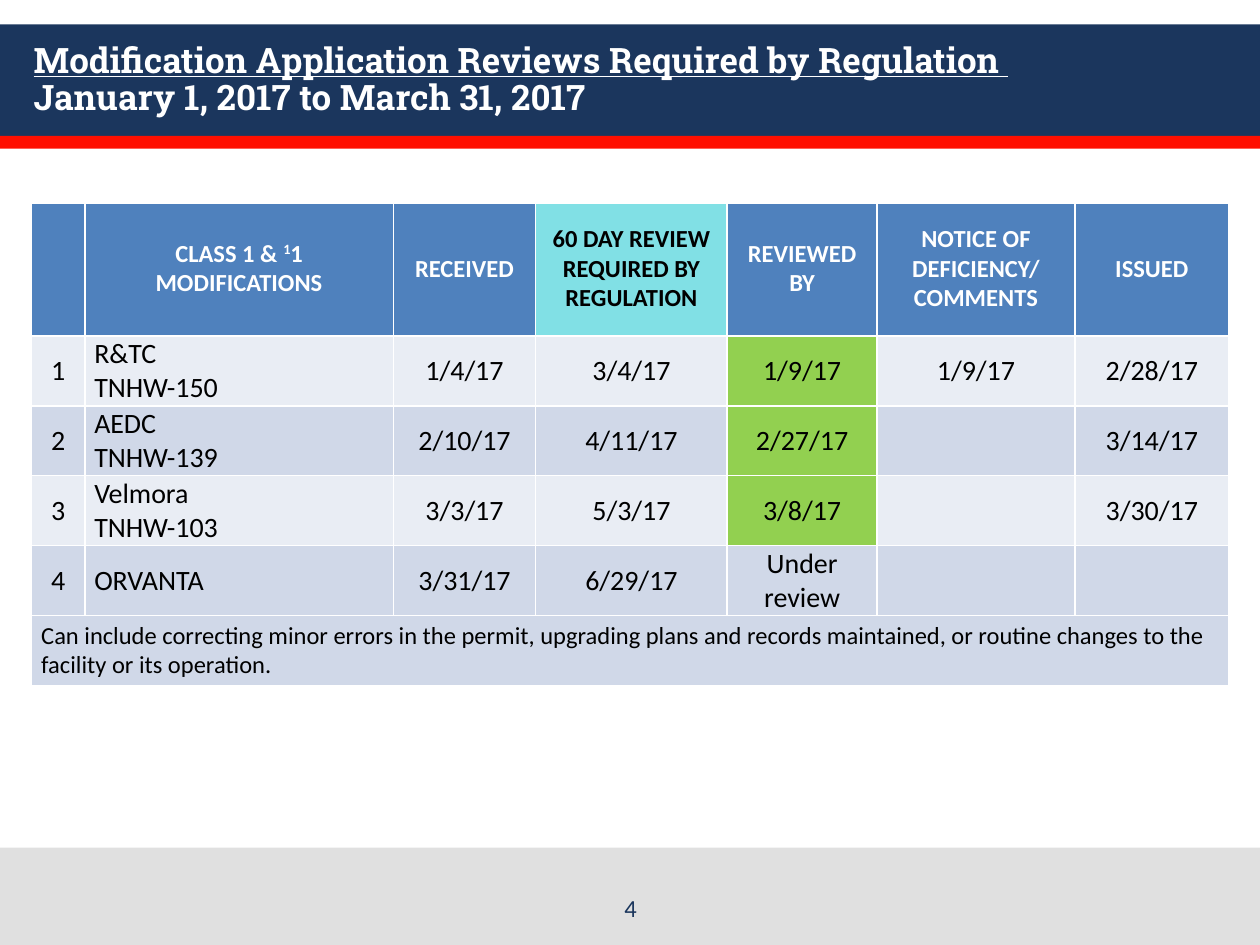
import lxml.etree
import pptx
import pptx.dml.color
import pptx.enum.shapes
import pptx.enum.text
import pptx.oxml.ns
import pptx.util

Cm = pptx.util.Cm
Pt = pptx.util.Pt
ALIGN = pptx.enum.text.PP_ALIGN
ANCHOR = pptx.enum.text.MSO_ANCHOR

COLORS = {
    "white": "FFFFFF", "black": "000000", "navy": "1B365D", "red": "FF0F00",
    "footer": "E0E0E0", "header": "4F81BD", "deadline": "81E0E5",
    "odd": "E9EDF4", "even": "D0D8E8", "reviewed": "92D050",
}
HEADINGS = [
    [], [[("CLASS 1 & ", {}), ("1", {"baseline": 30000}), ("1 MODIFICATIONS", {})]],
    ["RECEIVED"], ["60 DAY REVIEW", "REQUIRED BY", "REGULATION"],
    ["REVIEWED BY"], ["NOTICE OF DEFICIENCY/ COMMENTS"], ["ISSUED"],
]
REVIEWS = [
    (["R&TC", "TNHW-150"], "1/4/17", "3/4/17", "1/9/17", "1/9/17", "2/28/17"),
    (["AEDC", "TNHW-139"], "2/10/17", "4/11/17", "2/27/17", "", "3/14/17"),
    (["Velmora", "TNHW-103"], "3/3/17", "5/3/17", "3/8/17", "", "3/30/17"),
    (["ORVANTA"], "3/31/17", "6/29/17", "Under review", "", ""),
]
NOTE = ("Can include correcting minor errors in the permit, upgrading plans and records "
        "maintained, or routine changes to the facility or its operation.")
COLUMN_WIDTHS = [1.07, 6.22, 2.87, 3.86, 3.02, 3.99, 3.1]
HEADER_HEIGHT, ROW_HEIGHT = 2.71, 1.41
FACILITY, DEADLINE, REVIEWED = 1, 3, 4


def rgb(name):
    """Return the named colour."""
    return pptx.dml.color.RGBColor.from_string(COLORS[name])


def apply(target, values):
    """Set each attribute of the target from a dict."""
    for name, value in values.items():
        setattr(target, name, value)


class SlideBuilder:
    """Hold the text style and the current slide."""

    font = {"name": "Calibri", "size": Pt(16), "bold": False}

    def __init__(self, slide):
        """Keep the slide to draw on."""
        self.slide = slide

    def band(self, top, height, color):
        """Draw a full-width rectangle."""
        shape = self.slide.shapes.add_shape(
            pptx.enum.shapes.MSO_SHAPE.RECTANGLE, 0, Cm(top), Cm(25.4), Cm(height))
        shape.shadow.inherit = False
        shape.fill.solid()
        shape.fill.fore_color.rgb = rgb(color)
        shape.line.fill.background()

    def run(self, paragraph, text, color, baseline=None, **font):
        """Add one run of styled text."""
        run = paragraph.add_run()
        run.text = text
        apply(run.font, {**self.font, **font})
        run.font.color.rgb = rgb(color)
        if baseline:
            run.font._element.set("baseline", str(baseline))

    def text_box(self, left, top, width, height, anchor, **paragraph_format):
        """Add a wrapping text box and return its paragraph."""
        shape = self.slide.shapes.add_textbox(Cm(left), Cm(top), Cm(width), Cm(height))
        apply(shape.text_frame, {"word_wrap": True, "vertical_anchor": anchor})
        paragraph = shape.text_frame.paragraphs[0]
        apply(paragraph, paragraph_format)
        return paragraph

    def table(self, left, top, widths, heights):
        """Add an unstyled table with the given grid."""
        table = self.slide.shapes.add_table(
            len(heights), len(widths), Cm(left), Cm(top),
            Cm(sum(widths)), Cm(sum(heights))).table
        apply(table, {"first_row": False, "horz_banding": False})
        for column, width in zip(table.columns, widths):
            column.width = Cm(width)
        for row, height in zip(table.rows, heights):
            row.height = Cm(height)
        return table

    def borders(self, cell, top_width):
        """Give a cell white borders."""
        qn = pptx.oxml.ns.qn
        properties = cell._tc.get_or_add_tcPr()
        for side, width in {"L": 1, "R": 1, "T": top_width, "B": 1}.items():
            line = lxml.etree.SubElement(properties, qn(f"a:ln{side}"), w=str(Pt(width)))
            fill = lxml.etree.SubElement(line, qn("a:solidFill"))
            lxml.etree.SubElement(fill, qn("a:srgbClr"), val=COLORS["white"])

    def cell(self, cell, lines, fill, color="black", align=ALIGN.CENTER, top_width=1, **font):
        """Fill a cell with one paragraph per line."""
        self.borders(cell, top_width)
        cell.fill.solid()
        cell.fill.fore_color.rgb = rgb(fill)
        apply(cell, {"vertical_anchor": ANCHOR.MIDDLE, "margin_left": Cm(0.19),
                     "margin_right": Cm(0.19), "margin_top": 0, "margin_bottom": 0})
        for index, line in enumerate(lines):
            frame = cell.text_frame
            paragraph = frame.add_paragraph() if index else frame.paragraphs[0]
            paragraph.alignment = align
            for text, extra in [(line, {})] if isinstance(line, str) else line:
                self.run(paragraph, text, color, **font, **extra)


def add_review_table(builder):
    """Add the table of application reviews."""
    heights = [HEADER_HEIGHT] + [ROW_HEIGHT] * (len(REVIEWS) + 1)
    table = builder.table(0.64, 4.06, COLUMN_WIDTHS, heights)
    for column, lines in enumerate(HEADINGS):
        fill, color = ("deadline", "black") if column == DEADLINE else ("header", "white")
        builder.cell(table.cell(0, column), lines, fill, color,
                     top_width=3, size=Pt(14), bold=True)
    for row, (facility, *dates) in enumerate(REVIEWS, 1):
        band = "odd" if row % 2 else "even"
        entries = [[str(row)], facility] + [[date] if date else [] for date in dates]
        for column, lines in enumerate(entries):
            done = column == REVIEWED and lines[0][0].isdigit()
            builder.cell(table.cell(row, column), lines, "reviewed" if done else band,
                         align=ALIGN.LEFT if column == FACILITY else ALIGN.CENTER)
    last = len(heights) - 1
    table.cell(last, 0).merge(table.cell(last, len(COLUMN_WIDTHS) - 1))
    for column in range(len(COLUMN_WIDTHS)):
        builder.cell(table.cell(last, column), [] if column else [NOTE], "even",
                     align=ALIGN.LEFT, size=Pt(14))


def main():
    """Build and save the slide."""
    presentation = pptx.Presentation()
    apply(presentation, {"slide_width": Cm(25.4), "slide_height": Cm(19.05)})
    builder = SlideBuilder(presentation.slides.add_slide(presentation.slide_layouts[6]))
    for top, height, color in [(0.49, 2.25, "navy"), (2.74, 0.26, "red"), (17.09, 1.96, "footer")]:
        builder.band(top, height, color)

    title = builder.text_box(0.43, 0.48, 24.56, 2.29, ANCHOR.MIDDLE, line_spacing=0.9)
    title_font = {"name": "Roboto Slab", "size": Pt(20), "bold": True}
    builder.run(title, "Modification Application Reviews Required by Regulation ",
                "white", underline=True, **title_font)
    title.add_line_break()
    builder.run(title, "January 1, 2017 to March 31, 2017", "white", **title_font)

    add_review_table(builder)
    number = builder.text_box(8.69, 17.7, 8.05, 1.02, ANCHOR.BOTTOM, alignment=ALIGN.CENTER)
    builder.run(number, "4", "navy", size=Pt(14))
    presentation.save("out.pptx")


if __name__ == "__main__":
    main()
